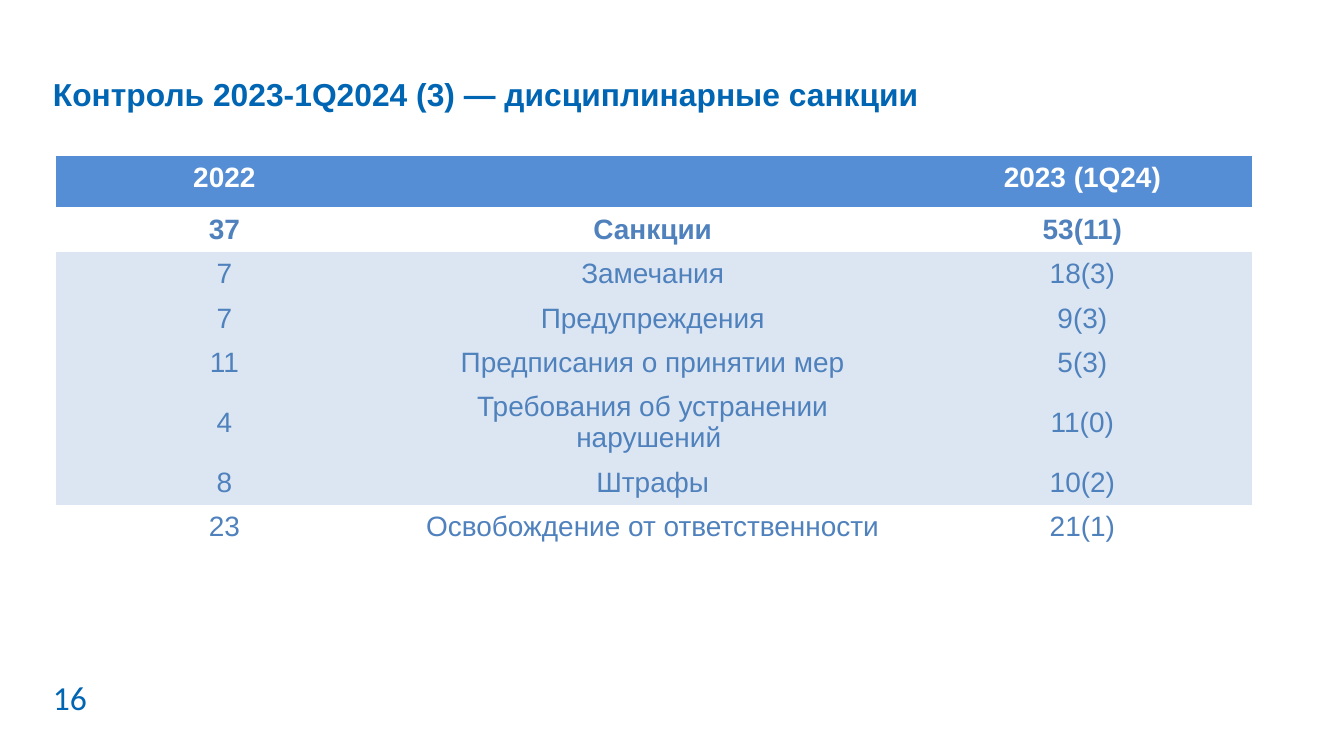
from pptx import Presentation
from pptx.dml.color import RGBColor as Rgb
from pptx.enum.text import MSO_ANCHOR as Anchor, MSO_AUTO_SIZE as Auto, PP_ALIGN as Align
from pptx.oxml.ns import qn
from pptx.util import Cm, Pt

BLUE, HEAD, BAND, TEXT, WHITE = "0065B2", "558ED5", "DCE6F2", "4F81BD", "FFFFFF"
PLAIN = "{2D5ABB26-0587-4C30-8999-92F81FD0307C}"
COLS = [6.38, 9.81, 6.43]
HIGH = [0.97, 0.84, 0.84, 0.84, 0.84, 1.42, 0.84, 0.84]
ROWS = [
    ("2022", "", "2023 (1Q24)"),
    ("37", "Санкции", "53(11)"),
    ("7", "Замечания", "18(3)"),
    ("7", "Предупреждения", "9(3)"),
    ("11", "Предписания о принятии мер", "5(3)"),
    ("4", "Требования об устранении нарушений ", "11(0)"),
    ("8", "Штрафы", "10(2)"),
    ("23", "Освобождение от ответственности", "21(1)"),
]
FILLS = [HEAD, None] + [BAND] * 5 + [None]


def color(code):
    """Turn a hex string into a colour."""
    return Rgb.from_string(code)


def style(para, size, code, bold=False, face="Arial", align=Align.LEFT):
    """Set the font and alignment of a paragraph."""
    para.alignment = align
    font = para.font
    font.name, font.size, font.bold = face, Pt(size), bold
    font.color.rgb = color(code)


def label(box, text, left, top, width, height):
    """Place a text shape without insets and return its paragraph."""
    box.left, box.top, box.width, box.height = map(Cm, (left, top, width, height))
    frame = box.text_frame
    frame.text = text
    frame.word_wrap = True
    frame.auto_size = Auto.NONE
    frame.vertical_anchor = Anchor.TOP
    frame.margin_left = frame.margin_right = frame.margin_top = frame.margin_bottom = 0
    return frame.paragraphs[0]


def fill_cell(cell, text, row):
    """Write and format one cell according to its row."""
    cell.text = text
    cell.margin_top = cell.margin_bottom = Cm(0.12)
    cell.vertical_anchor = Anchor.MIDDLE if row else Anchor.TOP
    style(cell.text_frame.paragraphs[0], 15, TEXT if row else WHITE, row < 2, align=Align.CENTER)
    if FILLS[row]:
        cell.fill.solid()
        cell.fill.fore_color.rgb = color(FILLS[row])
    else:
        cell.fill.background()


def add_grid(slide):
    """Add the table of sanctions."""
    frame = slide.shapes.add_table(len(ROWS), len(COLS), Cm(1.05), Cm(2.95), Cm(sum(COLS)), Cm(sum(HIGH)))
    grid = frame.table
    grid.horz_banding = False
    next(frame.element.iter(qn("a:tableStyleId"))).text = PLAIN
    for col, width in zip(grid.columns, COLS):
        col.width = Cm(width)
    for row, height in enumerate(HIGH):
        grid.rows[row].height = Cm(height)
        for col, text in enumerate(ROWS[row]):
            fill_cell(grid.cell(row, col), text, row)


def main():
    """Build the slide and save it."""
    deck = Presentation()
    deck.slide_width, deck.slide_height = Cm(25.4), Cm(14.29)
    slide = deck.slides.add_slide(deck.slide_layouts[5])
    title = label(slide.shapes.title, "Контроль 2023-1Q2024 (3) — дисциплинарные санкции", 1, 1.15, 17.4, 0.95)
    title.line_spacing = Pt(28)
    style(title, 17, BLUE, True)
    add_grid(slide)
    box = slide.shapes.add_textbox(0, 0, 0, 0)
    style(label(box, "16", 1, 12.8, 5.92, 0.71), 18, BLUE, face="Calibri")
    deck.save("out.pptx")


if __name__ == "__main__":
    main()
